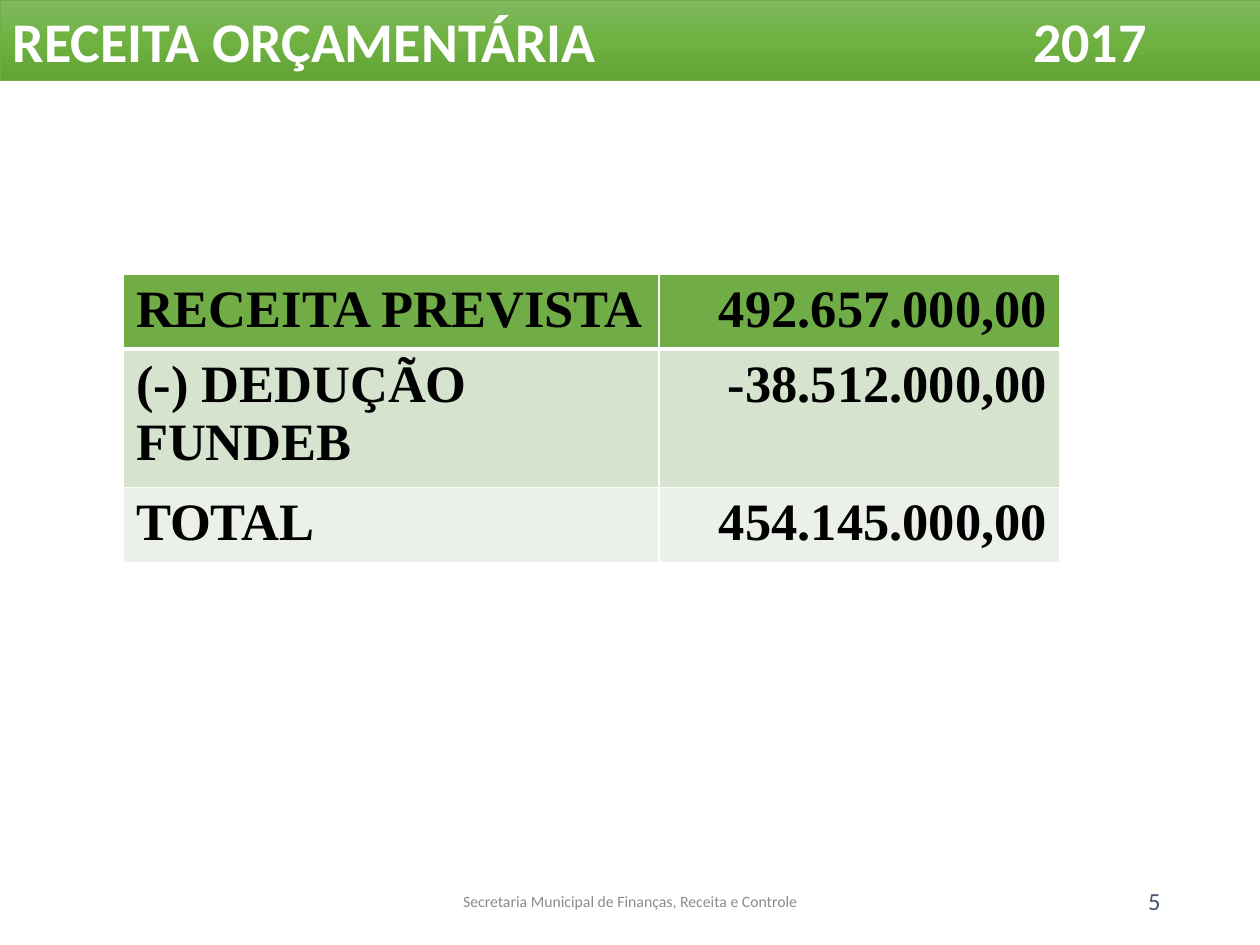
from copy import deepcopy
from pptx import Presentation, util as u
from pptx.dml.color import RGBColor
from pptx.enum import text as t
from pptx.oxml import parse_xml
from pptx.oxml.ns import nsdecls, qn

# Content
TITLE = "RECEITA ORÇAMENTÁRIA"
YEAR = "2017"
ROWS = [
    ("RECEITA PREVISTA", "492.657.000,00"),
    ("(-) DEDUÇÃO FUNDEB", "-38.512.000,00"),
    ("TOTAL", "454.145.000,00"),
]
FOOT = "Secretaria Municipal de Finanças, Receita e Controle"
PAGE = "5"

HUES = {
    "white": "FFFFFF", "black": "000000", "green": "70AD47",
    "light": "81B861", "mid": "6FB242", "dark": "62A336",
    "band": "D5E3CF", "pale": "EBF1E9", "grey": "8C8C8C", "slate": "44546A",
}
FILLS = ["green", "band", "pale"]
COLS = [4.25, 3.18]
HIGH = [0.59, 1.1, 0.6]
WIDE, TALL = 10, 7.5
LEFT, RIGHT, CENTER = t.PP_ALIGN.LEFT, t.PP_ALIGN.RIGHT, t.PP_ALIGN.CENTER


def hue(name):
    return RGBColor.from_string(HUES[name])


def write(para, words, size, color, face="Calibri", bold=False, align=LEFT):
    para.alignment = align
    run = para.add_run()
    run.text = words
    font = run.font
    font.size, font.name, font.bold = u.Pt(size), face, bold
    font.color.rgb = hue(color)


def edge(cell, side, width):
    """Add a white border; sides must come in the order L, R, T, B."""
    line = parse_xml(
        f'<a:{side} {nsdecls("a")} w="{u.Pt(width)}"><a:solidFill>'
        f'<a:srgbClr val="{HUES["white"]}"/></a:solidFill></a:{side}>')
    props = cell._tc.get_or_add_tcPr()
    props.insert(len(props.findall("*")) - 1, line)  # before the fill


deck = Presentation()
deck.slide_width, deck.slide_height = u.Inches(WIDE), u.Inches(TALL)
slide = deck.slides.add_slide(deck.slide_layouts[5])

# Title band with a three-stop gradient
band = slide.shapes.title
band.left, band.top = 0, 0
band.width, band.height = u.Inches(WIDE), u.Inches(0.64)
band.fill.gradient()
band.fill.gradient_angle = 270
stops = band.fill.gradient_stops
stops[0].color.rgb, stops[0].position = hue("light"), 0
stops[1].color.rgb, stops[1].position = hue("dark"), 1
first = band._element.spPr.find(".//" + qn("a:gs"))
first.addnext(deepcopy(first))
middle = band.fill.gradient_stops[1]
middle.color.rgb, middle.position = hue("mid"), 0.5
band.line.color.rgb, band.line.width = hue("green"), u.Pt(0.5)

# Title text, the year on a tab stop
frame = band.text_frame
frame.auto_size = t.MSO_AUTO_SIZE.NONE
frame.vertical_anchor = t.MSO_ANCHOR.MIDDLE
head = frame.paragraphs[0]
head._p.get_or_add_pPr().append(parse_xml(
    f'<a:tabLst {nsdecls("a")}><a:tab pos="{u.Inches(8.1)}" algn="l"/></a:tabLst>'))
write(head, f"{TITLE}\t{YEAR}", 32, "white", bold=True)

# Revenue table
grid = slide.shapes.add_table(
    len(ROWS), len(COLS), u.Inches(0.98), u.Inches(2.18),
    u.Inches(sum(COLS)), u.Inches(sum(HIGH))).table
for col, width in zip(grid.columns, COLS):
    col.width = u.Inches(width)
for r, pair in enumerate(ROWS):
    grid.rows[r].height = u.Inches(HIGH[r])
    for c, words in enumerate(pair):
        cell = grid.cell(r, c)
        cell.fill.solid()
        cell.fill.fore_color.rgb = hue(FILLS[r])
        for side in ("lnL", "lnR", "lnT", "lnB"):
            thick = (r, side) in [(0, "lnB"), (1, "lnT")]
            edge(cell, side, 3 if thick else 1)
        write(cell.text_frame.paragraphs[0], words, 30, "black",
              "Times New Roman", True, RIGHT if c else LEFT)

# Footer and page number
for left, width, words, size, color, align in [
    (3.31, 3.38, FOOT, 9, "grey", CENTER),
    (7.06, 2.25, PAGE, 14, "slate", RIGHT),
]:
    box = slide.shapes.add_textbox(
        u.Inches(left), u.Inches(6.95), u.Inches(width), u.Inches(0.4))
    box.text_frame.word_wrap = True
    box.text_frame.vertical_anchor = t.MSO_ANCHOR.MIDDLE
    write(box.text_frame.paragraphs[0], words, size, color, align=align)

deck.save("out.pptx")
